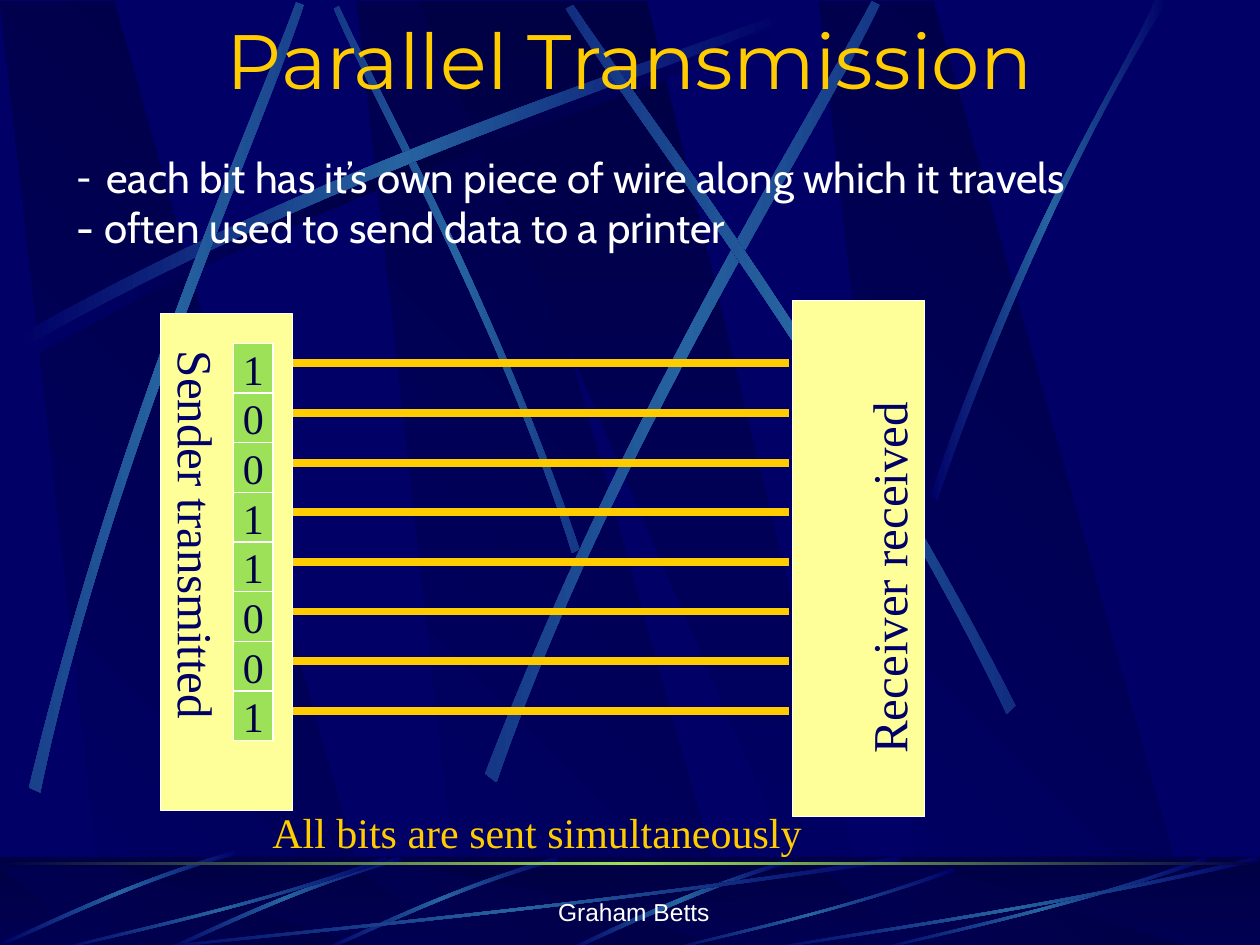
from math import cos, radians, sin

from lxml.etree import SubElement
from pptx import Presentation
from pptx.dml.color import RGBColor
from pptx.enum.shapes import MSO_CONNECTOR, MSO_SHAPE
from pptx.enum.text import MSO_ANCHOR as Anchor, PP_ALIGN as Align
from pptx.oxml.ns import qn
from pptx.util import Pt

NAVY = RGBColor(0x00, 0x00, 0x66)
DARK = RGBColor(0x00, 0x00, 0x44)
BLUE = RGBColor(0x26, 0x63, 0xA0)
GREEN = RGBColor(0x9C, 0xE1, 0x57)
GOLD = RGBColor(0xFF, 0xCC, 0x00)
CREAM = RGBColor(0xFF, 0xFF, 0x99)
WHITE = RGBColor(0xFF, 0xFF, 0xFF)
FADE = [NAVY, BLUE, NAVY]

SERIF = "Times New Roman"
WIDTH, HEIGHT = 720, 540
FOOTER = (0, 489.6, WIDTH, 54)
BITS = "10011001"
BIT_STEP = 28.37
MIDDLE_WIRE = 4

# Outlines as fractions of their box
PANEL = [(0.28, 1), (1, 1), (0.3, 0), (0, 0)]
WEDGE = [(0, 0), (0.9, 1), (1, 1), (0.5, 0)]
SWEEP = [(1, 0.04), (0.57, 0.57), (0.17, 0.85), (0.01, 1),
         (0, 0.99), (0.17, 0.81), (0.62, 0.51), (0.99, 0)]

# Rays: two cubic curves of four points each, in points
BAND = [(10, 192.2), (190, 90), (373, 36.7), (446.4, 7.2),
        (448.6, 11.5), (372.2, 43.9), (178.6, 103), (12.2, 199.4)]
BEAMS = [  # rotation, outline as it stands on the page
    (45, [(331.2, 313.9), (281.5, 168.5), (217.4, 55.4), (193.7, 3.6),
          (190.8, 5), (212.4, 56.9), (286.6, 185.8), (326.9, 316.1)]),
    (311.7, [(16.6, 450), (67, 240.5), (141.8, 75.6), (169.2, 1.4),
             (173.5, 2.9), (149, 78.5), (61.9, 265), (23, 452.9)]),
    (321.6, [(277.2, 442.1), (358.6, 230.4), (459.4, 73.4), (498.2, 0.7),
             (502.6, 2.9), (467.3, 77.8), (349.9, 255.6), (283.7, 447.1)]),
    (34.7, [(580.3, 403.2), (482.4, 211), (371.5, 68.4), (327.6, 2.9),
            (323.3, 5), (365, 72.7), (493.2, 234), (575.3, 408.2)]),
]
RIGHT_RAY = [(531.4, 283.7), (586.1, 124.6), (639.4, 47.5), (660.2, 0),
             (667.4, 0), (601.9, 104.4), (553.7, 231.8), (535.7, 285.8)]
FLOOR_RAY = [(451.4, 491), (386.6, 510.5), (343.4, 534.2), (322.6, 542.9),
             (326.2, 543.6), (352.8, 531.4), (411.1, 504), (452.2, 493.2)]
FLOOR_BEAM = [(318.2, 489.6), (255.6, 507.6), (206.6, 532.8), (184.3, 542.2),
              (185, 543.6), (207.4, 535), (262.8, 506.2), (319.7, 491.8)]
SWEEPS = [(72, 489.6, 444, 54), (30, 489.6, 192, 54), (379.4, 496, 166.3, 47.6),
          (498.2, 489.6, 192, 54), (432, 489.6, 288, 54)]


def paint(shape, colors, angle=0):
    """Fill with one colour, or with an even gradient along a clockwise angle."""
    shape.shadow.inherit = False
    shape.line.fill.background()
    if isinstance(colors, RGBColor):
        shape.fill.solid()
        shape.fill.fore_color.rgb = colors
        return
    shape.fill.gradient()
    gradient = shape.fill._fill._gradFill
    gradient.set("rotWithShape", "0")
    stops = gradient.find(qn("a:gsLst"))
    for stop in list(stops):
        stops.remove(stop)
    for index, color in enumerate(colors):
        position = 100000 * index // (len(colors) - 1)
        stop = SubElement(stops, qn("a:gs"), pos=str(position))
        SubElement(stop, qn("a:srgbClr"), val=str(color))
    gradient.find(qn("a:lin")).set("ang", str(angle * 60000))


def add_outline(page, points, colors, angle=0):
    corners = [(Pt(x), Pt(y)) for x, y in points]
    builder = page.shapes.build_freeform(*corners[0], scale=1)
    builder.add_line_segments(corners[1:], close=True)
    shape = builder.convert_to_shape()
    paint(shape, colors, angle)
    return shape


def placed(fractions, box):
    left, top, width, height = box
    return [(left + x * width, top + y * height) for x, y in fractions]


def shifted(points, right, down):
    return [(x + right, y + down) for x, y in points]


def turned(points, degrees):
    """Points turned clockwise about the page corner."""
    c, s = cos(radians(degrees)), sin(radians(degrees))
    return [(x * c - y * s, x * s + y * c) for x, y in points]


def add_ray(page, points, colors=FADE, rotation=0):
    """Draw two cubic curves joined by a straight end."""
    level = turned(points, -rotation)
    shape = add_outline(page, level, colors)
    lines = shape._element.findall(".//" + qn("a:lnTo"))
    for first, *others in (lines[:3], lines[4:7]):
        first.tag = qn("a:cubicBezTo")
        for line in others:
            first.append(line[0])
            line.getparent().remove(line)
    if rotation:
        middle = [(min(axis) + max(axis)) / 2 for axis in zip(*level)]
        x, y = turned([middle], rotation)[0]
        shape.left = Pt(x) - shape.width // 2
        shape.top = Pt(y) - shape.height // 2
        shape.rotation = rotation


def add_box(page, box, colors, angle=0):
    shape = page.shapes.add_shape(MSO_SHAPE.RECTANGLE, *map(Pt, box))
    paint(shape, colors, angle)
    return shape


def write(shape, lines, font, align=Align.LEFT, **frame_format):
    frame = shape.text_frame
    frame_format = {"word_wrap": True, "vertical_anchor": Anchor.TOP, **frame_format}
    for name, value in frame_format.items():
        setattr(frame, name, value)
    name, size, color = font
    for index, line in enumerate(lines):
        para = frame.add_paragraph() if index else frame.paragraphs[0]
        para.alignment = align
        span = para.add_run()
        span.text = line
        for key, value in {"name": name, "size": Pt(size)}.items():
            setattr(span.font, key, value)
        span.font.color.rgb = color
    return frame


def add_text(page, box, lines, font, **options):
    return write(page.shapes.add_textbox(*map(Pt, box)), lines, font, **options)


def add_dash(para, indent):
    properties = para._p.get_or_add_pPr()
    properties.set("marL", str(Pt(indent)))
    properties.set("indent", str(-Pt(indent)))
    SubElement(properties, qn("a:buFont"), typeface=SERIF)
    SubElement(properties, qn("a:buChar"), char="-")


def edge(shape):
    shape.line.color.rgb = WHITE
    shape.line.width = Pt(0.75)


def add_station(page, box, rotation, label, indent):
    station = add_box(page, box, CREAM)
    edge(station)
    station.rotation = rotation
    write(station, [label], (SERIF, 28, NAVY), margin_left=Pt(indent),
          margin_top=Pt(37.6), margin_bottom=Pt(0))
    return station


def add_wire(page, y, sender=None):
    ends = Pt(167.3), Pt(y), Pt(450.7), Pt(y)
    wire = page.shapes.add_connector(MSO_CONNECTOR.STRAIGHT, *ends)
    if sender is not None:  # the turned sender has its top side on the right
        wire.begin_connect(sender, 0)
        wire.begin_x, wire.begin_y = ends[:2]
    wire.line.color.rgb = GOLD
    wire.line.width = Pt(4.5)
    SubElement(wire._element.spPr, qn("a:effectLst"))


def add_bit(page, y, digit):
    cell = add_box(page, (133.4, y, 22.7, BIT_STEP), GREEN)
    edge(cell)
    write(cell, [digit], (SERIF, 24, DARK), align=Align.CENTER,
          word_wrap=False, vertical_anchor=Anchor.MIDDLE)


def add_panels(page, top, height):
    for left in (203.8, 0, 468):
        add_outline(page, placed(PANEL, (left, top, 217.4, height)), [NAVY, DARK], 315)
    add_outline(page, placed(WEDGE, (239.8, top, 260, height)), [DARK, NAVY], 90)


def add_backdrop(page):
    page.background.fill.solid()
    page.background.fill.fore_color.rgb = NAVY
    add_panels(page, 0.7, 541)
    add_ray(page, shifted(BAND, 4.3, 5.8), [NAVY, DARK, NAVY])
    for index, (rotation, beam) in enumerate(BEAMS):
        add_ray(page, beam, rotation=rotation)
        if index == 0:
            add_ray(page, BAND)
    add_ray(page, RIGHT_RAY)

    add_box(page, FOOTER, [DARK, NAVY], 90)
    add_panels(page, 495.4, 48)
    veil = add_box(page, FOOTER, DARK)
    color = veil.fill._xPr.find(qn("a:solidFill"))[0]
    SubElement(color, qn("a:alpha"), val="50000")
    add_ray(page, FLOOR_RAY)
    for right, down in ((0, 0), (-90, 0), (-183.6, -3.6)):
        add_ray(page, shifted(FLOOR_BEAM, right, down), rotation=315)
    for box in SWEEPS:
        add_ray(page, placed(SWEEP, box))
    add_box(page, (0, 492.5, WIDTH, 1.6), [DARK, GREEN, DARK])


def main():
    deck = Presentation()
    deck.slide_width, deck.slide_height = Pt(WIDTH), Pt(HEIGHT)
    page = deck.slides.add_slide(deck.slide_layouts[6])
    add_backdrop(page)
    add_text(page, (248.2, 496.8, 228, 36), ["Graham Betts"], ("Arial", 14, WHITE),
             align=Align.CENTER, vertical_anchor=Anchor.BOTTOM)
    add_station(page, (343.2, 281.4, 295, 75.6), 270, "Receiver received", 36)
    notes = add_text(page, (36.9, 82.8, 646.6, 93.6),
                     ["each bit has it’s own piece of wire along which it travels",
                      "- often used to send data to a printer"], ("Cabin", 24, WHITE))
    add_dash(notes.paragraphs[0], 16.8)
    add_text(page, (54, 3.6, 612, 59.8), ["Parallel Transmission"],
             ("Montserrat", 44, GOLD), align=Align.CENTER, vertical_anchor=Anchor.MIDDLE)
    sender = add_station(page, (-12.5, 283.5, 284, 75.6), 90, "Sender transmitted", 21.2)
    add_text(page, (148.5, 457.2, 432.7, 36), ["All bits are sent simultaneously"],
             (SERIF, 24, GOLD))
    for index in range(len(BITS)):
        add_wire(page, 207.6 + index * BIT_STEP, sender if index == MIDDLE_WIRE else None)
    for index, digit in enumerate(BITS):
        add_bit(page, 196.3 + index * BIT_STEP, digit)
    deck.save("out.pptx")


if __name__ == "__main__":
    main()
